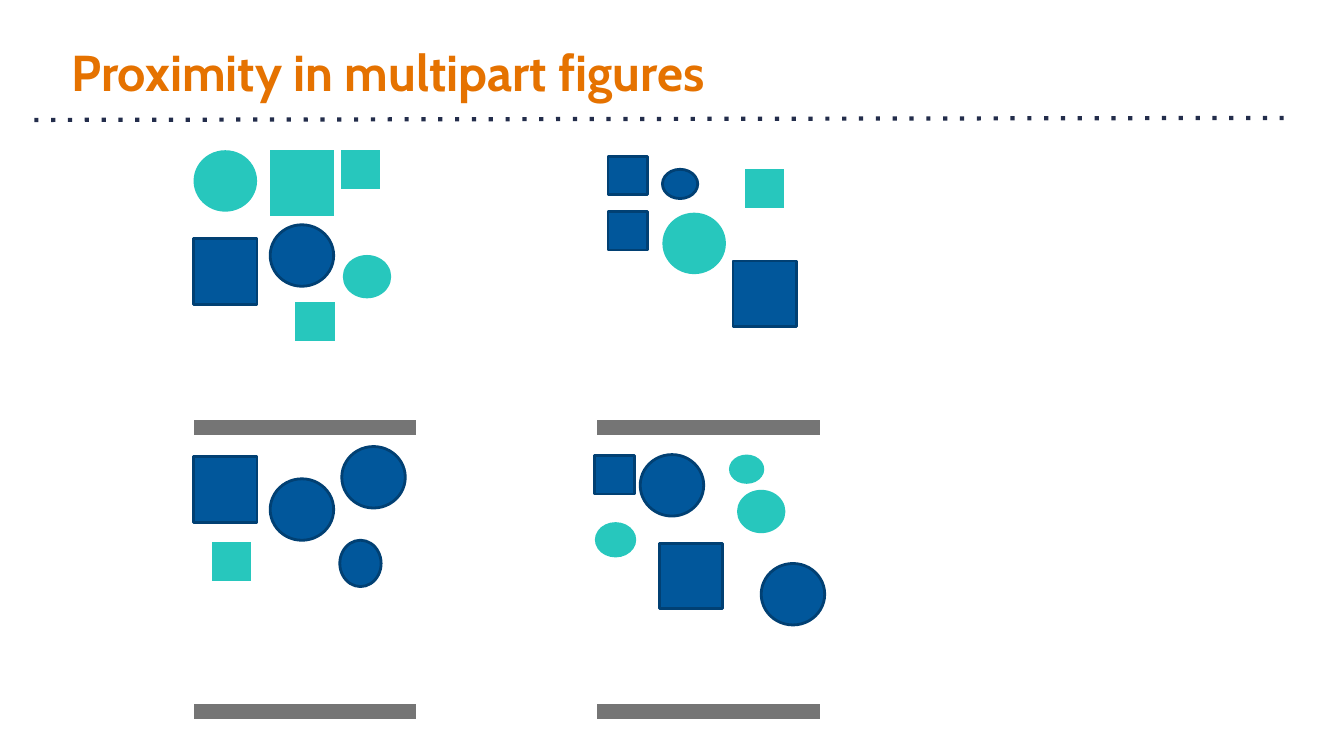
import pptx
import pptx.util
import pptx.dml.color
import pptx.enum.dml
import pptx.enum.shapes
import pptx.enum.text
import pptx.oxml
from dataclasses import dataclass

PX = 9144
SHAPE = pptx.enum.shapes.MSO_SHAPE
SQUARE = SHAPE.FLOWCHART_PROCESS
CIRCLE = SHAPE.OVAL


@dataclass(frozen=True)
class Theme:
    font: str = "Cabin"
    title_size: int = 36
    title: str = "E57200"
    rule: str = "232D4B"
    rule_width: int = 3
    blue: str = "01579B"
    blue_edge: str = "014073"
    edge_width: int = 2
    teal: str = "27C7BD"
    bar: str = "757575"


THEME = Theme()
EDGES = {THEME.blue: THEME.blue_edge}

BIG_SQUARE = (SQUARE, 63, 65)
SMALL_SQUARE = (SQUARE, 39, 38)
BIG_CIRCLE = (CIRCLE, 63, 61)
MEDIUM_OVAL = (CIRCLE, 48, 43)
SMALL_OVAL = (CIRCLE, 41, 35)
TINY_OVAL = (CIRCLE, 35, 29)
TALL_OVAL = (CIRCLE, 41, 46)
BAR = (SQUARE, 221, 15)

TOP_LEFT = [
    (BIG_CIRCLE, THEME.teal, 192, 149),
    (BIG_SQUARE, THEME.teal, 268, 149),
    (SMALL_SQUARE, THEME.teal, 338, 149),
    (BIG_SQUARE, THEME.blue, 192, 237),
    (BIG_CIRCLE, THEME.blue, 268, 223),
    (MEDIUM_OVAL, THEME.teal, 340, 253),
    (SMALL_SQUARE, THEME.teal, 293, 300),
]
TOP_RIGHT = [
    (SMALL_SQUARE, THEME.blue, 603, 155),
    (SMALL_SQUARE, THEME.blue, 603, 210),
    (TINY_OVAL, THEME.blue, 657, 168),
    (BIG_CIRCLE, THEME.teal, 657, 211),
    (SMALL_SQUARE, THEME.teal, 739, 168),
    (BIG_SQUARE, THEME.blue, 727, 259),
]
BOTTOM_LEFT = [
    (BIG_SQUARE, THEME.blue, 192, 453),
    (BIG_CIRCLE, THEME.blue, 268, 475),
    (BIG_CIRCLE, THEME.blue, 339, 443),
    (SMALL_SQUARE, THEME.teal, 210, 538),
    (TALL_OVAL, THEME.blue, 337, 536),
]
BOTTOM_RIGHT = [
    (SMALL_SQUARE, THEME.blue, 590, 452),
    (BIG_CIRCLE, THEME.blue, 635, 451),
    (TINY_OVAL, THEME.teal, 723, 451),
    (MEDIUM_OVAL, THEME.teal, 731, 486),
    (SMALL_OVAL, THEME.teal, 590, 518),
    (BIG_SQUARE, THEME.blue, 654, 539),
    (BIG_CIRCLE, THEME.blue, 755, 559),
]


def px(*lengths):
    return [pptx.util.Emu(length * PX) for length in lengths]


def rgb(value):
    return pptx.dml.color.RGBColor.from_string(value)


def add_title(slide, text):
    title = slide.shapes.add_textbox(*px(61, 24, 1212, 93))
    frame = title.text_frame
    frame.word_wrap = True
    frame.vertical_anchor = pptx.enum.text.MSO_ANCHOR.MIDDLE
    inset, = px(10)
    frame.margin_left = frame.margin_right = inset
    frame.margin_top = frame.margin_bottom = inset
    heading = frame.paragraphs[0]
    heading.text = text
    heading.font.name = THEME.font
    heading.font.size = pptx.util.Pt(THEME.title_size)
    heading.font.bold = True
    heading.font.color.rgb = rgb(THEME.title)


def add_dotted_rule(slide):
    rule = slide.shapes.add_connector(
        pptx.enum.shapes.MSO_CONNECTOR.STRAIGHT, *px(34, 119, 1273, 117))
    rule.line.color.rgb = rgb(THEME.rule)
    rule.line.width = pptx.util.Pt(THEME.rule_width)
    rule.line.dash_style = pptx.enum.dml.MSO_LINE.ROUND_DOT
    properties = rule.element.spPr
    properties.find(".//" + pptx.oxml.ns.qn("a:prstDash")).set("val", "dot")
    pptx.oxml.xmlchemy.OxmlElement
    properties.append(pptx.oxml.xmlchemy.OxmlElement("a:effectLst"))


def add_figure(slide, form, color, left, top):
    outline, width, height = form
    figure = slide.shapes.add_shape(outline, *px(left, top, width, height))
    figure.shadow.inherit = False
    figure.fill.solid()
    figure.fill.fore_color.rgb = rgb(color)
    if color in EDGES:
        figure.line.color.rgb = rgb(EDGES[color])
        figure.line.width = pptx.util.Pt(THEME.edge_width)
    else:
        figure.line.fill.background()


def main():
    deck = pptx.Presentation()
    deck.slide_width, deck.slide_height = px(1333, 750)
    slide = deck.slides.add_slide(deck.slide_layouts[6])
    add_dotted_rule(slide)
    add_title(slide, "Proximity in multipart figures")
    for row, panels in enumerate([(TOP_LEFT, TOP_RIGHT), (BOTTOM_LEFT, BOTTOM_RIGHT)]):
        for column, panel in enumerate(panels):
            for figure in panel:
                add_figure(slide, *figure)
            add_figure(slide, BAR, THEME.bar, 192 + 400 * column, 417 + 281 * row)
    deck.save("out.pptx")


if __name__ == "__main__":
    main()
